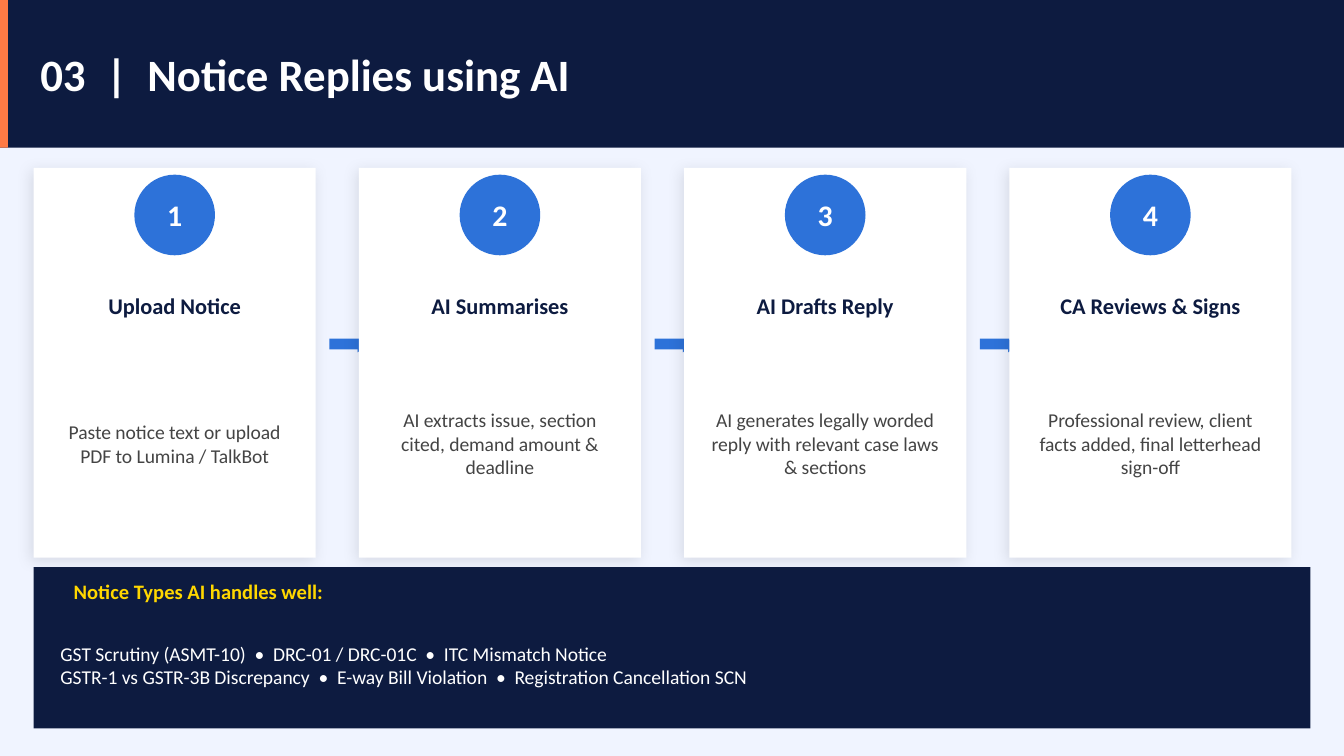
"""Build the slide on replying to notices with AI."""
from dataclasses import dataclass
from typing import Any

from lxml.etree import SubElement
from pptx import Presentation
from pptx.dml.color import RGBColor
from pptx.enum.shapes import MSO_SHAPE as Preset
from pptx.enum.text import MSO_ANCHOR as Anchor, MSO_AUTO_SIZE as AutoSize, PP_ALIGN as Align
from pptx.oxml.ns import qn
from pptx.util import Inches, Pt

NAVY, BLUE, WHITE, GREY = "0D1B40", "2D72D9", "FFFFFF", "444444"
ORANGE, GOLD, PALE = "FF7A45", "FFD700", "F0F4FF"
SLIDE_WIDTH = 10
CARD_LEFT, CARD_TOP, CARD_WIDTH, CARD_HEIGHT, PITCH = 0.25, 1.25, 2.1, 2.9, 2.42
BADGE = 0.6
Box = tuple[float, float, float, float]


@dataclass(frozen=True)
class Step:
    """One stage of the reply process."""
    heading: str
    detail: str


@dataclass(frozen=True)
class Style:
    """Text look: size in points, colour, weight, alignment and insets."""
    size: float
    color: str
    bold: bool = False
    align: Any = Align.LEFT
    inset: bool = True


STEPS = [
    Step("Upload Notice", "Paste notice text or upload PDF to Lumina / TalkBot"),
    Step("AI Summarises", "AI extracts issue, section cited, demand amount & deadline"),
    Step("AI Drafts Reply", "AI generates legally worded reply with relevant case laws & sections"),
    Step("CA Reviews & Signs", "Professional review, client facts added, final letterhead sign-off"),
]
NOTICE_TYPES = [
    ["GST Scrutiny (ASMT-10)", "DRC-01 / DRC-01C", "ITC Mismatch Notice"],
    ["GSTR-1 vs GSTR-3B Discrepancy", "E-way Bill Violation", "Registration Cancellation SCN"],
]
TITLE = Style(24, WHITE, True)
NUMBER = Style(16, WHITE, True, Align.CENTER, False)
HEADING = Style(12, NAVY, True, Align.CENTER)
DETAIL = Style(10.5, GREY, False, Align.CENTER)
ARROWHEAD = Style(10, BLUE, False, Align.CENTER, False)
PANEL_HEADING = Style(11, GOLD, True)
PANEL_LIST = Style(10.5, WHITE, inset=False)


def rgb(code: str) -> RGBColor:
    """Turn a hex string into a colour."""
    return RGBColor.from_string(code)


def apply(target: Any, values: dict[str, Any]) -> None:
    """Set every named attribute on the target."""
    for name, value in values.items():
        setattr(target, name, value)


def place(shape: Any, box: Box) -> None:
    """Move and size a shape."""
    apply(shape, dict(zip(("left", "top", "width", "height"), map(Inches, box))))


def write(shape: Any, lines: list[str], style: Style) -> None:
    """Fill a shape with styled, vertically centred lines."""
    frame = shape.text_frame
    frame.text = "\n".join(lines)
    side, end = (Inches(0.1), Inches(0.05)) if style.inset else (0, 0)
    apply(frame, {"word_wrap": True, "auto_size": AutoSize.NONE, "vertical_anchor": Anchor.MIDDLE,
                  "margin_left": side, "margin_right": side, "margin_top": end, "margin_bottom": end})
    for paragraph in frame.paragraphs:
        apply(paragraph, {"alignment": style.align, "space_before": Pt(0)})
        apply(paragraph.runs[0].font, {"name": "Calibri", "size": Pt(style.size), "bold": style.bold})
        paragraph.runs[0].font.color.rgb = rgb(style.color)


def add_text(slide: Any, box: Box, text: str, style: Style) -> None:
    """Add a text box with one line of styled text."""
    write(slide.shapes.add_textbox(*map(Inches, box)), [text], style)


def add_block(slide: Any, box: Box, color: str, preset: Any = Preset.RECTANGLE) -> Any:
    """Add a flat filled shape without outline."""
    block = slide.shapes.add_shape(preset, *map(Inches, box))
    block.shadow.inherit = False
    block.fill.solid()
    block.fill.fore_color.rgb = rgb(color)
    block.line.fill.background()
    return block


def add_soft_shadow(block: Any) -> None:
    """Give a block a faint outer shadow."""
    effects = block.element.spPr.find(qn("a:effectLst"))
    shadow = SubElement(effects, qn("a:outerShdw"), blurRad=str(Pt(8)), dist=str(Pt(2)),
                        dir=str(135 * 60000), algn="bl", rotWithShape="0")
    tint = SubElement(shadow, qn("a:srgbClr"), val="000000")
    SubElement(tint, qn("a:alpha"), val="10000")


def add_step(slide: Any, index: int, step: Step) -> None:
    """Draw a step card and the arrow to the next one."""
    left = CARD_LEFT + index * PITCH
    if index < len(STEPS) - 1:
        add_block(slide, (left + 2.2, 2.52, 0.22, 0.08), BLUE)
        add_text(slide, (left + 2.35, 2.42, 0.2, 0.28), "▶", ARROWHEAD)
    add_soft_shadow(add_block(slide, (left, CARD_TOP, CARD_WIDTH, CARD_HEIGHT), WHITE))
    badge_left = left + (CARD_WIDTH - BADGE) / 2
    badge = add_block(slide, (badge_left, CARD_TOP + 0.05, BADGE, BADGE), BLUE, Preset.OVAL)
    write(badge, [str(index + 1)], NUMBER)
    add_text(slide, (left + 0.1, 2.05, 1.9, 0.45), step.heading, HEADING)
    add_text(slide, (left + 0.1, 2.55, 1.9, 1.5), step.detail, DETAIL)


def add_header(slide: Any) -> None:
    """Draw the title band with its accent."""
    add_block(slide, (0, 0, SLIDE_WIDTH, 1.1), NAVY)
    accent = add_block(slide, (0, 0, 0.06, 1.1), ORANGE)
    title = slide.shapes.title
    place(title, (0.2, 0, 9.6, 1.1))
    write(title, ["03  |  Notice Replies using AI"], TITLE)
    accent.element.addnext(title.element)


def add_notice_panel(slide: Any) -> None:
    """Draw the panel of notice types."""
    panel = add_block(slide, (0.25, 4.22, 9.5, 1.2), NAVY)
    add_text(slide, (0.45, 4.24, 3.5, 0.32), "Notice Types AI handles well:", PANEL_HEADING)
    notices = slide.placeholders[1]
    place(notices, (0.45, 4.56, 9.1, 0.78))
    write(notices, ["  •  ".join(row) for row in NOTICE_TYPES], PANEL_LIST)
    for properties in notices.element.iter(qn("a:pPr")):
        properties.set("marL", "0")
        properties.set("indent", "0")
        SubElement(properties, qn("a:buNone"))
    panel.element.addnext(notices.element)


def main() -> None:
    """Build and save the slide."""
    deck = Presentation()
    apply(deck, {"slide_width": Inches(SLIDE_WIDTH), "slide_height": Inches(SLIDE_WIDTH * 9 / 16)})
    slide = deck.slides.add_slide(deck.slide_layouts[1])
    slide.background.fill.solid()
    slide.background.fill.fore_color.rgb = rgb(PALE)
    add_header(slide)
    for index, step in enumerate(STEPS):
        add_step(slide, index, step)
    add_notice_panel(slide)
    deck.save("out.pptx")


if __name__ == "__main__":
    main()
